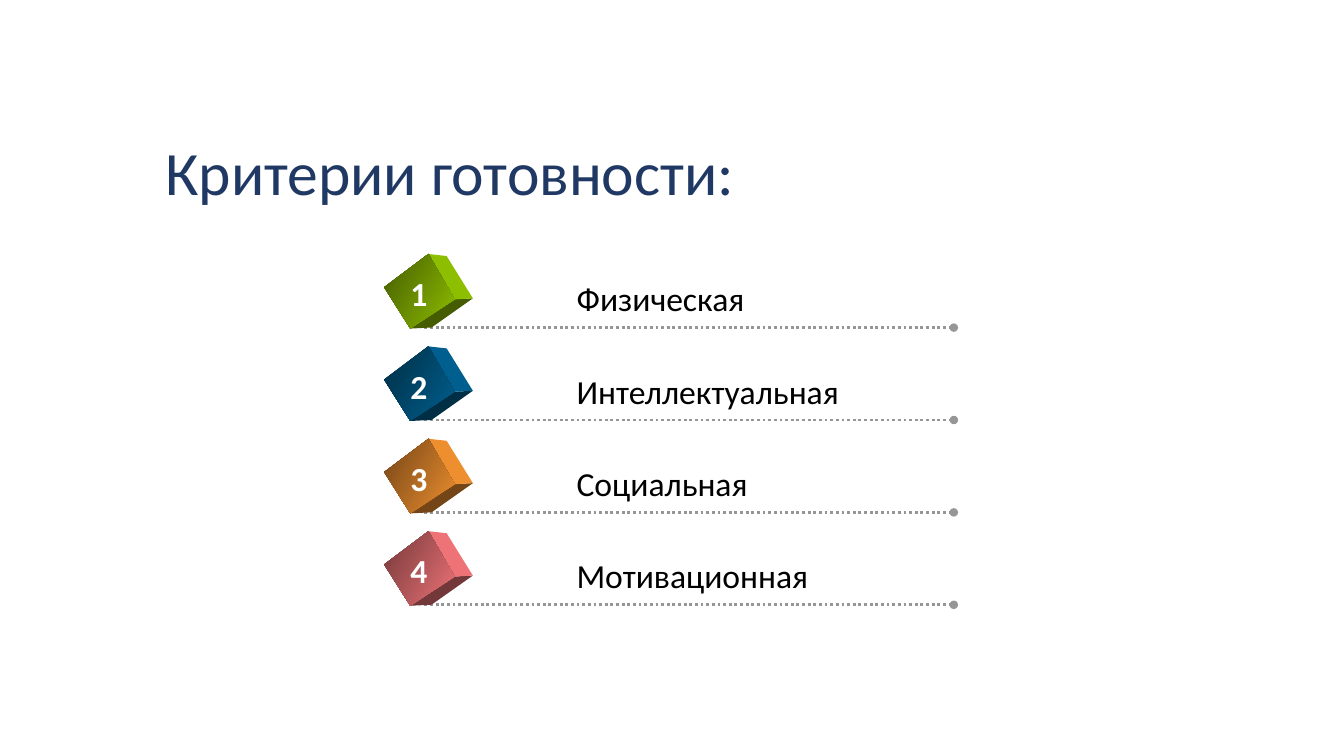
from pptx import Presentation
from pptx.dml.color import RGBColor
from pptx.enum.dml import MSO_LINE
from pptx.enum.shapes import MSO_CONNECTOR
from pptx.enum.text import MSO_ANCHOR, MSO_AUTO_SIZE, PP_ALIGN
from pptx.oxml.ns import qn
from pptx.util import Inches, Pt
from lxml.etree import SubElement

NAVY = RGBColor(0x20, 0x38, 0x64)
BLACK = RGBColor(0, 0, 0)
WHITE = RGBColor(0xFF, 0xFF, 0xFF)
GRAY = RGBColor(0x96, 0x96, 0x96)
GREEN = RGBColor(0x99, 0xCC, 0x00)
BLUE = RGBColor(0x00, 0x66, 0x99)
ORANGE = RGBColor(0xFF, 0x99, 0x33)
PINK = RGBColor(0xFF, 0x7C, 0x80)

FRONT = [(3.81, 2.85), (4.25, 2.52), (4.51, 2.97), (4.07, 3.26)]
SIDE = [(4.25, 2.52), (4.43, 2.54), (4.69, 2.96), (4.51, 2.97)]
BOTTOM = [(4.07, 3.26), (4.51, 2.97), (4.69, 2.96), (4.28, 3.25)]
LIGHT, DARK = 0.93, 0.45
PITCH = 2.75 / 3

criteria = [
    ("Физическая", 1.88, GREEN),
    ("Интеллектуальная", 2.83, BLUE),
    ("Социальная", 1.91, ORANGE),
    ("Мотивационная", 2.6, PINK),
]


def shade(color, factor):
    return RGBColor(*(round(c * factor) for c in color))


def add_label(shapes, text, x, y, w, color, bold, align):
    tb = shapes.add_textbox(Inches(x), Inches(y), Inches(w), Inches(0.51))
    tf = tb.text_frame
    tf.word_wrap = False
    tf.auto_size = MSO_AUTO_SIZE.SHAPE_TO_FIT_TEXT
    p = tf.paragraphs[0]
    p.alignment = align
    r = p.add_run()
    r.text = text
    r.font.name = "Calibri"
    r.font.size = Pt(24)
    r.font.bold = bold
    r.font.color.rgb = color


prs = Presentation()
prs.slide_width = Inches(13.33)
prs.slide_height = Inches(7.5)
s = prs.slides.add_slide(prs.slide_layouts[5])

title = s.shapes.title
title.left, title.top = Inches(1.4), Inches(1.36)
title.width, title.height = Inches(11.5), Inches(1.45)
tf = title.text_frame
tf.word_wrap = True
tf.auto_size = MSO_AUTO_SIZE.NONE
tf.vertical_anchor = MSO_ANCHOR.TOP
tf.margin_left = Inches(0.24)
p = tf.paragraphs[0]
p.alignment = PP_ALIGN.LEFT
p.line_spacing = 0.9
r = p.add_run()
r.text = "Критерии готовности:"
r.font.name = "Calibri"
r.font.size = Pt(44)
r.font.color.rgb = NAVY

for i, (name, width, color) in enumerate(criteria):
    dy = i * PITCH
    row = s.shapes.add_group_shape().shapes

    y = Inches(3.25 + dy)
    line = row.add_connector(MSO_CONNECTOR.STRAIGHT, Inches(4.21), y, Inches(9.46), y)
    line.line.color.rgb = GRAY
    line.line.width = Pt(2)
    line.line.dash_style = MSO_LINE.ROUND_DOT
    SubElement(line.line._get_or_add_ln(), qn("a:tailEnd"), type="oval")
    SubElement(line._element.spPr, qn("a:effectLst"))

    for face, tone in ((BOTTOM, DARK), (SIDE, LIGHT), (FRONT, None)):
        points = [(Inches(px), Inches(py + dy)) for px, py in face]
        fb = row.build_freeform(*points[0])
        fb.add_line_segments(points[1:])
        sp = fb.convert_to_shape()
        sp.shadow.inherit = False
        sp.line.fill.background()
        if tone:
            sp.fill.solid()
            sp.fill.fore_color.rgb = shade(color, tone)
        else:
            sp.fill.gradient()
            sp.fill.gradient_angle = 330
            for stop, factor in zip(sp.fill.gradient_stops, (DARK, LIGHT)):
                stop.color.rgb = shade(color, factor)

    add_label(row, name, 5.62, 2.71 + dy, width, BLACK, False, PP_ALIGN.LEFT)
    add_label(row, str(i + 1), 3.96, 2.66 + dy, 0.39, WHITE, True, PP_ALIGN.CENTER)

prs.save("out.pptx")
